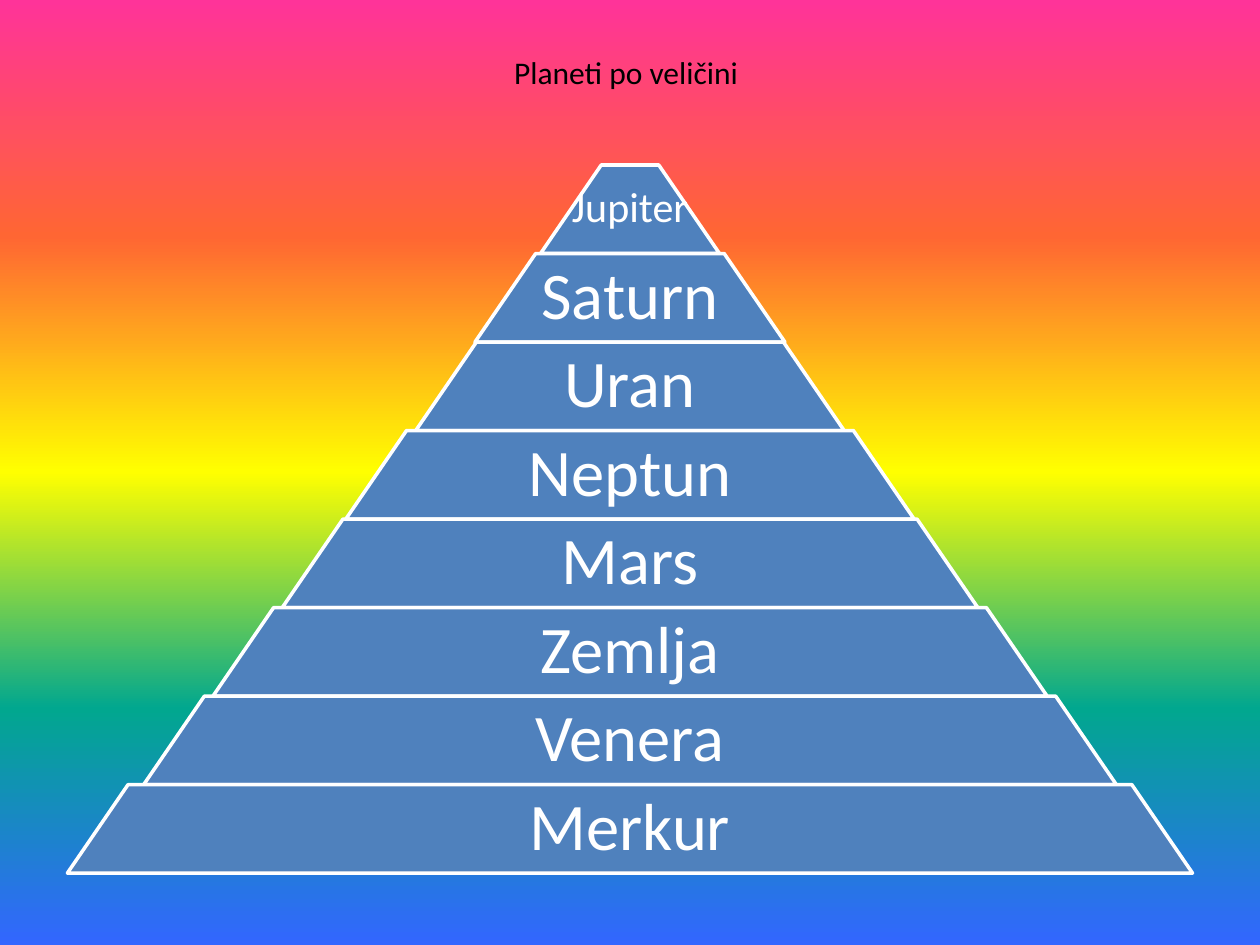
from lxml import etree
from pptx import Presentation
from pptx.dml.color import RGBColor
from pptx.enum import shapes, text
from pptx.oxml.ns import qn
from pptx.util import Inches, Pt

RAINBOW = [(0, "FF3399"), (25, "FF6633"), (50, "FFFF00"), (75, "01A78F"), (100, "3366FF")]

# Planet and width of its layer, from the tip down
LAYERS = [("Jupiter", 1.42), ("Saturn", 2.46), ("Uran", 3.4), ("Neptun", 4.51),
          ("Mars", 5.52), ("Zemlja", 6.62), ("Venera", 7.72), ("Merkur", 8.93)]
PYRAMID_TOP, PYRAMID_BOTTOM = 1.31, 6.93
CENTRE = 5


def rgb(value):
    return RGBColor.from_string(value)


class PlanetSlide:
    font_name = "Calibri"
    layer_fill = "4F81BD"
    white = "FFFFFF"
    black = "000000"
    slope = 0.686

    def __init__(self, prs):
        self.slide = prs.slides.add_slide(prs.slide_layouts[5])

    def style(self, paragraph, size, color):
        paragraph.font.name = self.font_name
        paragraph.font.size = Pt(size)
        paragraph.font.color.rgb = rgb(color)

    def background(self, stops):
        fill = self.slide.background.fill
        fill.gradient()
        fill.gradient_angle = 270
        stop_list = self.slide.element.find(".//" + qn("a:gsLst"))
        for old_stop in list(stop_list):
            stop_list.remove(old_stop)
        for percent, color in stops:
            stop = etree.SubElement(stop_list, qn("a:gs"), pos=str(percent * 1000))
            etree.SubElement(stop, qn("a:srgbClr"), val=color)

    def title(self, words, left, top, width, height):
        title = self.slide.shapes.title
        title.left, title.top = Inches(left), Inches(top)
        title.width, title.height = Inches(width), Inches(height)
        frame = title.text_frame
        frame.text = words
        frame.word_wrap = True
        frame.auto_size = text.MSO_AUTO_SIZE.SHAPE_TO_FIT_TEXT
        frame.vertical_anchor = text.MSO_ANCHOR.TOP
        frame.paragraphs[0].alignment = text.PP_ALIGN.LEFT
        self.style(frame.paragraphs[0], 18, self.black)

    def layer(self, left, top, width, height):
        layer = self.slide.shapes.add_shape(
            shapes.MSO_SHAPE.TRAPEZOID, Inches(left), Inches(top), Inches(width), Inches(height))
        layer.adjustments[0] = self.slope
        layer.shadow.inherit = False
        layer.fill.solid()
        layer.fill.fore_color.rgb = rgb(self.layer_fill)
        layer.line.color.rgb = rgb(self.white)
        layer.line.width = Pt(2)

    def label(self, words, left, top, width, height, size, inset):
        label = self.slide.shapes.add_textbox(
            Inches(left), Inches(top), Inches(width), Inches(height))
        frame = label.text_frame
        frame.word_wrap = True
        frame.vertical_anchor = text.MSO_ANCHOR.MIDDLE
        frame.margin_left = frame.margin_right = Inches(inset)
        frame.margin_top = frame.margin_bottom = Inches(inset)
        frame.text = words
        paragraph = frame.paragraphs[0]
        paragraph.alignment = text.PP_ALIGN.CENTER
        paragraph.line_spacing = 0.9
        self.style(paragraph, size, self.white)


def main():
    prs = Presentation()
    prs.slide_width, prs.slide_height = Inches(10), Inches(7.5)
    planets = PlanetSlide(prs)
    planets.background(RAINBOW)
    planets.title("Planeti po veličini", 3.98, 0.37, 2.83, 0.4)

    # Pyramid: equal layers centred on the slide; the tip has smaller text
    height = (PYRAMID_BOTTOM - PYRAMID_TOP) / len(LAYERS)
    for row, (planet, width) in enumerate(LAYERS):
        top = PYRAMID_TOP + row * height
        label_width, size, inset = (width, 24, 0.03) if row == 0 else (width * 0.65, 38, 0.05)
        planets.layer(CENTRE - width / 2, top, width, height)
        planets.label(planet, CENTRE - label_width / 2, top, label_width, height, size, inset)

    prs.save("out.pptx")


if __name__ == "__main__":
    main()
